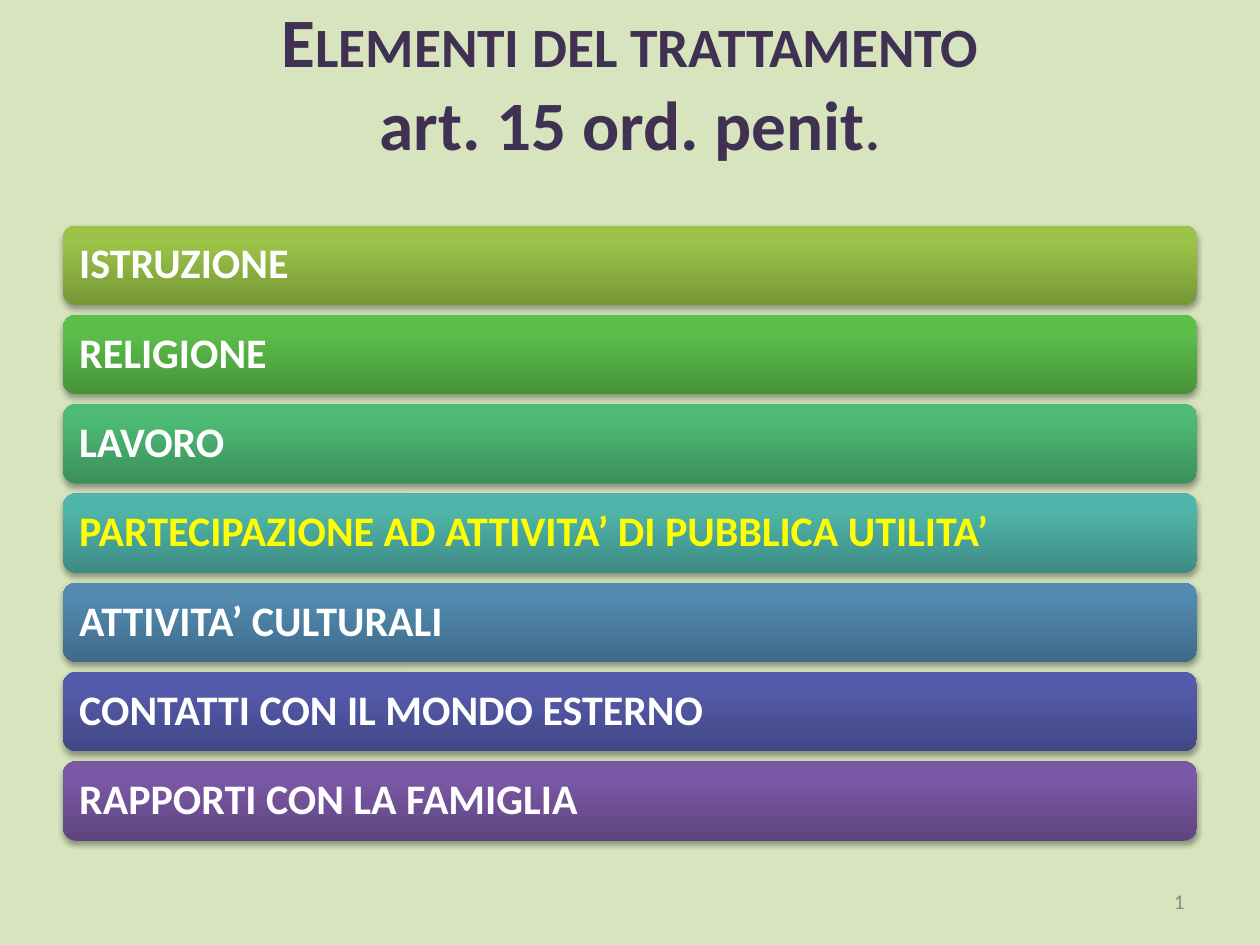
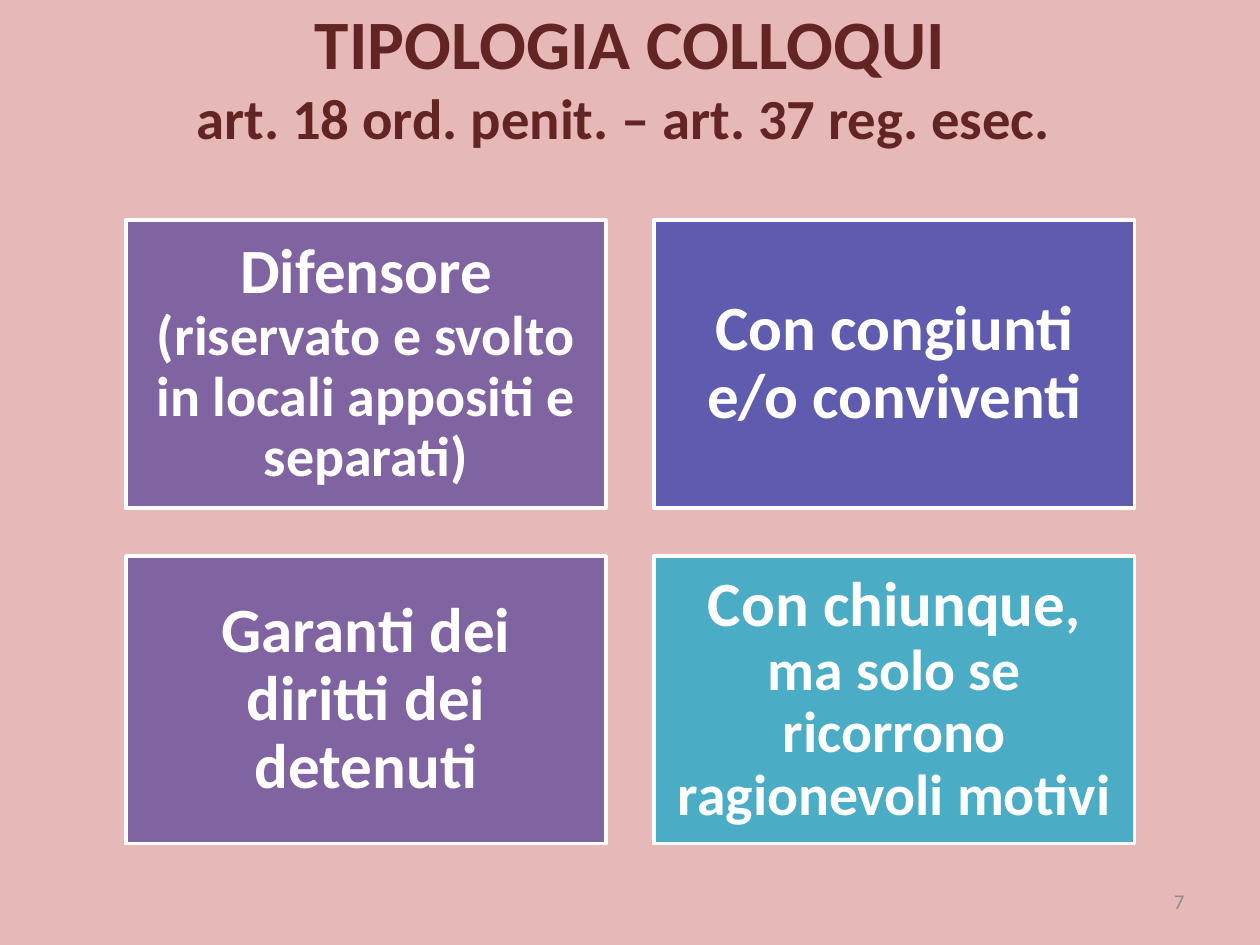
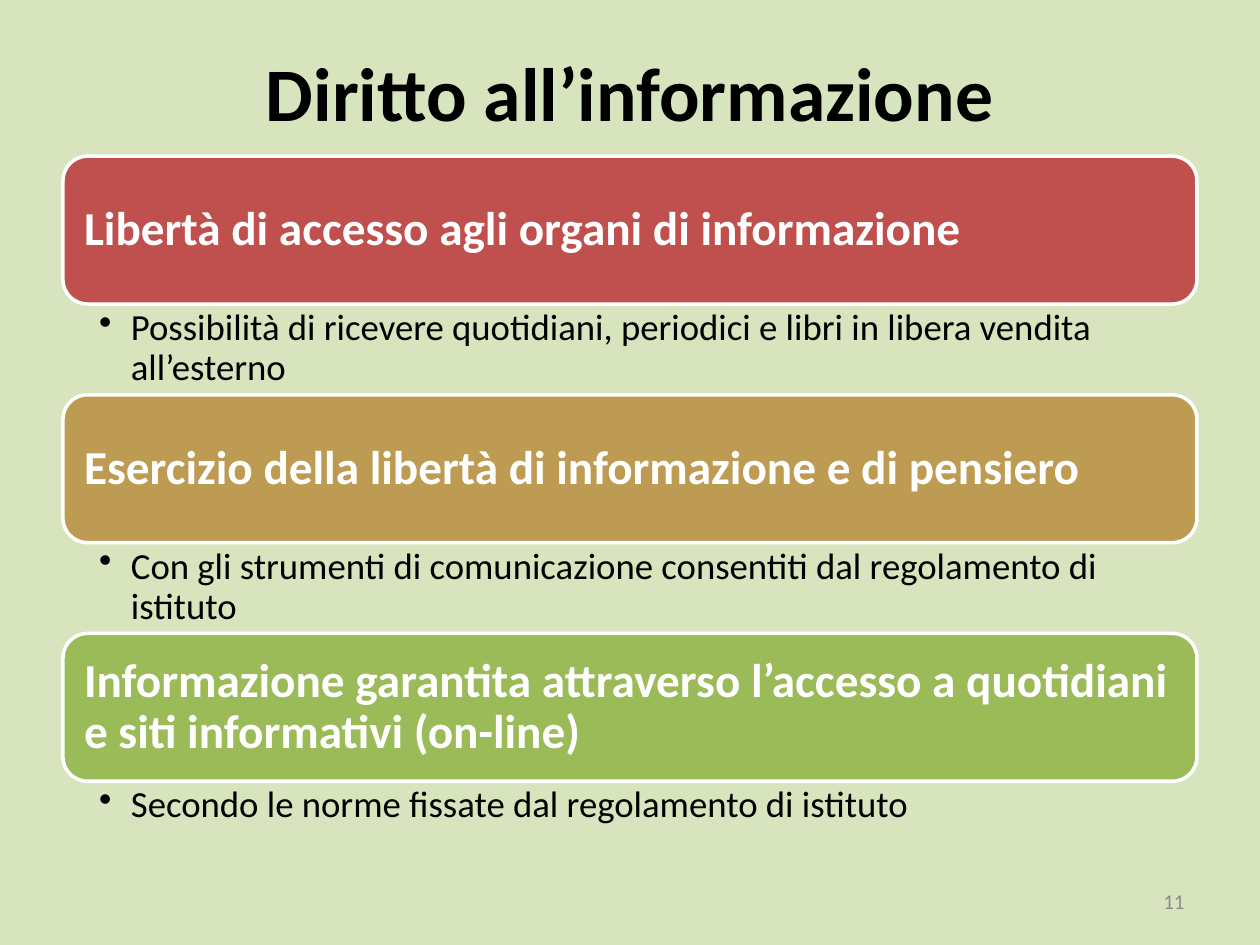
from dataclasses import dataclass
from typing import NamedTuple

from lxml import etree
from pptx import Presentation
from pptx.dml.color import RGBColor
from pptx.enum.shapes import MSO_SHAPE
from pptx.enum.text import MSO_ANCHOR, MSO_AUTO_SIZE, PP_ALIGN
from pptx.oxml.ns import qn
from pptx.util import Cm, Pt

RECTANGLE = MSO_SHAPE.RECTANGLE
ROUNDED = MSO_SHAPE.ROUNDED_RECTANGLE
TOP, MIDDLE = MSO_ANCHOR.TOP, MSO_ANCHOR.MIDDLE
LEFT, CENTER, RIGHT = PP_ALIGN.LEFT, PP_ALIGN.CENTER, PP_ALIGN.RIGHT
NO_AUTOFIT = MSO_AUTO_SIZE.NONE
TITLE_ONLY = 5


@dataclass(frozen=True)
class Theme:
    font: str = "Calibri"
    green_page: str = "D7E4BD"
    pink_page: str = "E6B9B8"
    white: str = "FFFFFF"
    black: str = "000000"
    grey: str = "8C8C8C"
    yellow: str = "FFFF00"
    purple_title: str = "403152"
    red_title: str = "632523"
    purple: str = "8064A2"
    indigo: str = "5F5BAE"
    aqua: str = "4BACC6"
    red: str = "C0504D"
    ochre: str = "BD9B53"
    olive: str = "9BBB59"
    title_size: float = 39.6
    subtitle_size: float = 32.4
    large_title_size: float = 43.2
    number_size: float = 12
    bar_size: float = 24
    card_size: float = 36
    section_size: float = 27
    detail_size: float = 21
    outline_width: float = 2
    line_spacing: float = 0.9


THEME = Theme()


class Box(NamedTuple):
    """A place on the slide, in centimetres."""
    left: float
    top: float
    width: float
    height: float

    def lengths(self) -> list[Cm]:
        return [Cm(value) for value in self]


class Span(NamedTuple):
    text: str
    size: float
    bold: bool = True
    small_caps: bool = False
    on_new_line: bool = False


class Bar(NamedTuple):
    text: str
    dark: str
    light: str
    color: str = THEME.white


class Card(NamedTuple):
    fill: str
    spans: list[Span]


class Section(NamedTuple):
    heading: str
    fill: str
    detail: str
    detail_height: float


NUMBER_BOX = Box(18.2, 17.65, 5.93, 1.02)

BARS = [
    Bar("ISTRUZIONE", "779737", "9BC348"),
    Bar("RELIGIONE", "479339", "5CBF4A"),
    Bar("LAVORO", "3B8F5A", "4DBA75"),
    Bar("PARTECIPAZIONE AD ATTIVITA’ DI PUBBLICA UTILITA’", "3D8B83", "50B5AA", THEME.yellow),
    Bar("ATTIVITA’ CULTURALI", "3F6A88", "528AB0"),
    Bar("CONTATTI CON IL MONDO ESTERNO", "414684", "555BAB"),
    Bar("RAPPORTI CON LA FAMIGLIA", "5F4480", "7B58A6"),
]

CARDS = [
    Card(THEME.purple, [
        Span("Difensore", THEME.card_size),
        Span(" ", 32, bold=False),
        Span("(riservato e svolto in locali appositi e separati)", 32),
    ]),
    Card(THEME.indigo, [Span("Con congiunti e/o conviventi", THEME.card_size)]),
    Card(THEME.purple, [Span("Garanti dei diritti dei detenuti", THEME.card_size)]),
    Card(THEME.aqua, [
        Span("Con chiunque", THEME.card_size),
        Span(", ma solo se ricorrono ragionevoli motivi", 33),
    ]),
]

SECTIONS = [
    Section("Libertà di accesso agli organi di informazione", THEME.red,
            "Possibilità di ricevere quotidiani, periodici e libri in libera vendita all’esterno",
            1.83),
    Section("Esercizio della libertà di informazione e di pensiero", THEME.ochre,
            "Con gli strumenti di comunicazione consentiti dal regolamento di istituto", 1.83),
    Section("Informazione garantita attraverso l’accesso a quotidiani e siti informativi (on-line)",
            THEME.olive, "Secondo le norme fissate dal regolamento di istituto", 1.24),
]


def write_spans(shape, spans: list[Span], color: str, alignment=LEFT, anchor=MIDDLE,
                line_spacing: float = 1.0):
    """Write the spans as one paragraph and return that paragraph."""
    frame = shape.text_frame
    frame.word_wrap = True
    frame.auto_size = NO_AUTOFIT
    frame.vertical_anchor = anchor
    paragraph = frame.paragraphs[0]
    paragraph.text = spans[0].text
    for span in spans[1:]:
        if span.on_new_line:
            paragraph.add_line_break()
        paragraph.add_run().text = span.text
    paragraph.alignment = alignment
    paragraph.line_spacing = line_spacing
    for run, span in zip(paragraph.runs, spans):
        run.font.name = THEME.font
        run.font.size = Pt(span.size)
        run.font.bold = span.bold
        run.font.color.rgb = RGBColor.from_string(color)
        if span.small_caps:
            run._r.get_or_add_rPr().set("cap", "small")
    return paragraph


def set_insets(shape, left: float, top: float, right: float, bottom: float) -> None:
    frame = shape.text_frame
    frame.margin_left, frame.margin_top = Cm(left), Cm(top)
    frame.margin_right, frame.margin_bottom = Cm(right), Cm(bottom)


def add_page(presentation, background: str, title_box: Box, title: list[Span],
             title_color: str, number: int):
    """Add a slide with its background, title and page number."""
    slide = presentation.slides.add_slide(presentation.slide_layouts[TITLE_ONLY])
    slide.background.fill.solid()
    slide.background.fill.fore_color.rgb = RGBColor.from_string(background)
    heading = slide.shapes.title
    heading.left, heading.top, heading.width, heading.height = title_box.lengths()
    write_spans(heading, title, title_color, CENTER)
    number_box = slide.shapes.add_textbox(*NUMBER_BOX.lengths())
    write_spans(number_box, [Span(str(number), THEME.number_size, bold=False)], THEME.grey, RIGHT)
    return slide


def add_panel(slide, kind, box: Box, fill: str, spans: list[Span], alignment, inset: float) -> None:
    """Add a plain filled shape with a white outline and text."""
    panel = slide.shapes.add_shape(kind, *box.lengths())
    panel.shadow.inherit = False
    panel.fill.solid()
    panel.fill.fore_color.rgb = RGBColor.from_string(fill)
    panel.line.color.rgb = RGBColor.from_string(THEME.white)
    panel.line.width = Pt(THEME.outline_width)
    set_insets(panel, inset, inset, inset, inset)
    write_spans(panel, spans, THEME.white, alignment, line_spacing=THEME.line_spacing)


def add_soft_shadow(shape) -> None:
    shape.shadow.inherit = False
    effects = shape._element.spPr.find(qn("a:effectLst"))
    shadow = etree.SubElement(effects, qn("a:outerShdw"), blurRad=str(Pt(3.1)),
                              dist=str(Pt(1.8)), dir="5400000", rotWithShape="0")
    color = etree.SubElement(shadow, qn("a:srgbClr"), val=THEME.black)
    etree.SubElement(color, qn("a:alpha"), val="35000")


def add_bar(slide, box: Box, bar: Bar) -> None:
    shape = slide.shapes.add_shape(ROUNDED, *box.lengths())
    add_soft_shadow(shape)
    shape.line.fill.background()
    shape.fill.gradient()
    shape.fill.gradient_angle = 90
    stops = shape.fill.gradient_stops
    for stop, position, color in zip(stops, (0, 0.8), (bar.dark, bar.light)):
        stop.position = position
        stop.color.rgb = RGBColor.from_string(color)
    set_insets(shape, 0.25, 0.25, 0.25, 0.25)
    write_spans(shape, [Span(bar.text, THEME.bar_size)], bar.color,
                line_spacing=THEME.line_spacing)


def add_detail(slide, box: Box, text: str) -> None:
    """Add a bulleted text under a section heading."""
    detail = slide.shapes.add_textbox(*box.lengths())
    set_insets(detail, 0.73, 0.1, 0.53, 0.1)
    paragraph = write_spans(detail, [Span(text, THEME.detail_size, bold=False)], THEME.black,
                            anchor=TOP, line_spacing=THEME.line_spacing)
    properties = paragraph._p.get_or_add_pPr()
    indent = Cm(0.64)
    properties.set("marL", str(indent))
    properties.set("indent", str(-indent))
    etree.SubElement(properties, qn("a:buChar"), char="•")


def build_treatment(presentation) -> None:
    title = [
        Span("Elementi del trattamento", THEME.title_size, small_caps=True),
        Span("art. 15 ord. penit", THEME.title_size, on_new_line=True),
        Span(".", THEME.title_size, small_caps=True),
    ]
    slide = add_page(presentation, THEME.green_page, Box(1.27, 0.76, 22.86, 1.75), title,
                     THEME.purple_title, 1)
    top, pitch = 4.55, 1.8
    for index, bar in enumerate(BARS):
        add_bar(slide, Box(1.27, top + index * pitch, 22.86, 1.6), bar)


def build_interviews(presentation) -> None:
    title = [
        Span("TIPOLOGIA COLLOQUI", THEME.title_size),
        Span("art. 18 ord. penit. – art. 37 reg. esec. ", THEME.subtitle_size, on_new_line=True),
    ]
    slide = add_page(presentation, THEME.pink_page, Box(0, 0.33, 25.4, 2.39), title,
                     THEME.red_title, 7)
    left, top, width, height, gap = 2.54, 4.44, 9.68, 5.8, 0.97
    for index, card in enumerate(CARDS):
        row, column = divmod(index, 2)
        box = Box(left + column * (width + gap), top + row * (height + gap), width, height)
        add_panel(slide, RECTANGLE, box, card.fill, card.spans, CENTER, 0.38)


def build_information(presentation) -> None:
    title = [Span("Diritto all’informazione", THEME.large_title_size)]
    slide = add_page(presentation, THEME.green_page, Box(1.27, 0.76, 22.86, 2.16), title,
                     THEME.black, 11)
    left, top, width, height, pitch = 1.27, 3.15, 22.86, 2.98, 4.81
    for index, section in enumerate(SECTIONS):
        section_top = top + index * pitch
        add_panel(slide, ROUNDED, Box(left, section_top, width, height), section.fill,
                  [Span(section.heading, THEME.section_size)], LEFT, 0.28)
        add_detail(slide, Box(left, section_top + height, width, section.detail_height),
                   section.detail)


def main() -> None:
    presentation = Presentation()
    presentation.slide_width, presentation.slide_height = Cm(25.4), Cm(19.05)
    build_treatment(presentation)
    build_interviews(presentation)
    build_information(presentation)
    presentation.save("out.pptx")


if __name__ == "__main__":
    main()
